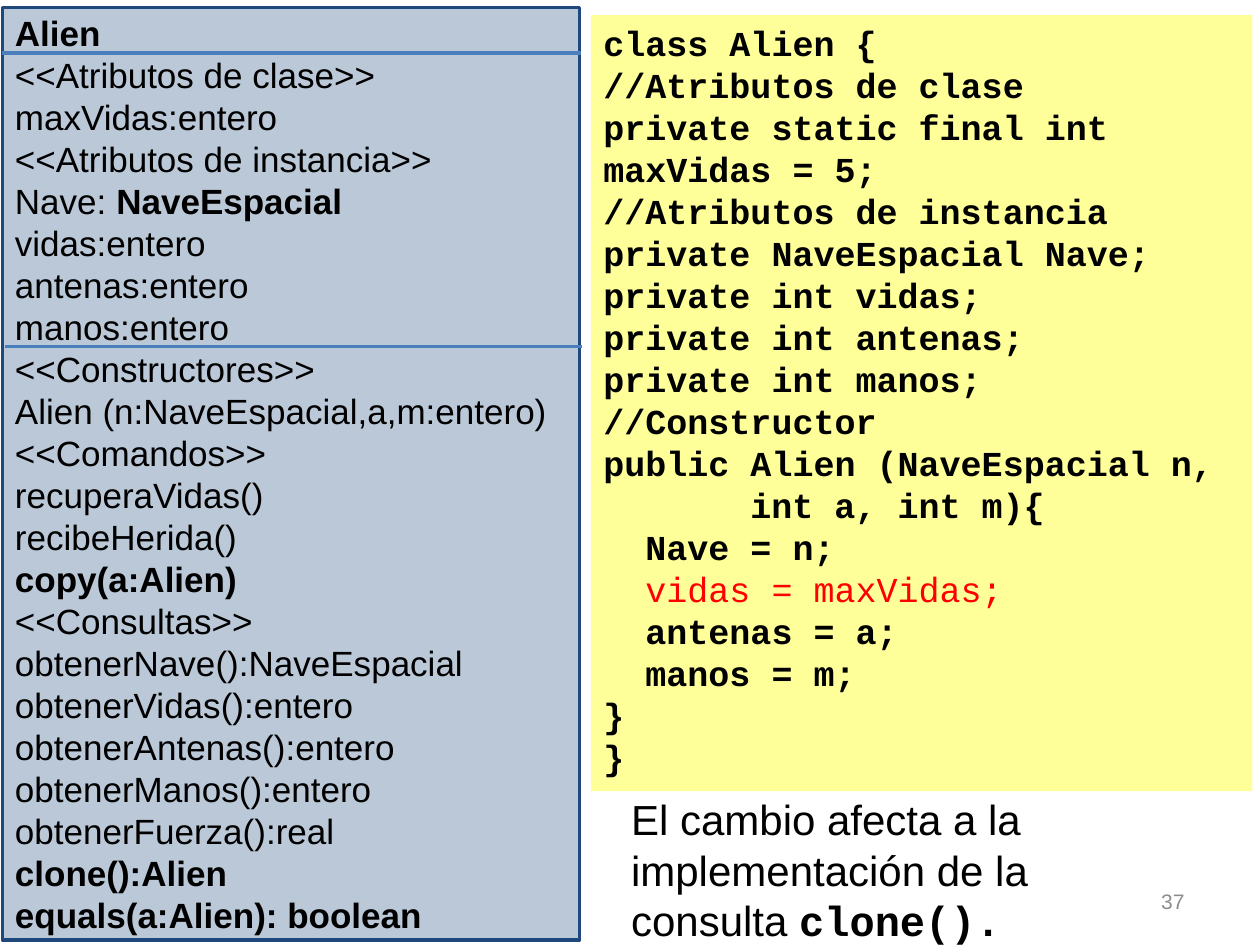
from lxml.etree import SubElement
from pptx import Presentation
from pptx.dml.color import RGBColor
from pptx.enum.shapes import MSO_CONNECTOR, MSO_SHAPE
from pptx.enum.text import MSO_ANCHOR, PP_ALIGN
from pptx.oxml.ns import qn
from pptx.util import Pt

PX = 9144
COLORS = {"navy": "1F497D", "divider": "4B7EBC", "code": "FFFF99",
          "text": "000000", "changed": "FF0000", "number": "8C8C8C"}
SANS, MONO = "Arial", "Courier New"

CLASS_MEMBERS = """Alien
<<Atributos de clase>>
maxVidas:entero
<<Atributos de instancia>>
Nave: NaveEspacial
vidas:entero
antenas:entero
manos:entero
<<Constructores>>
Alien (n:NaveEspacial,a,m:entero)
<<Comandos>>
recuperaVidas()
recibeHerida()
copy(a:Alien)
<<Consultas>>
obtenerNave():NaveEspacial
obtenerVidas():entero
obtenerAntenas():entero
obtenerManos():entero
obtenerFuerza():real
clone():Alien
equals(a:Alien): boolean"""
BOLD_MEMBERS = {"Alien", "copy(a:Alien)", "clone():Alien", "equals(a:Alien): boolean"}
FIELD_TYPE = "NaveEspacial"

CODE = """class Alien {
//Atributos de clase
private static final int maxVidas = 5;
//Atributos de instancia
private NaveEspacial Nave;
private int vidas;
private int antenas;
private int manos;
//Constructor
public Alien (NaveEspacial n,
\t\t int a, int m){
  Nave = n;
  vidas = maxVidas;
  antenas = a;
  manos = m;
}
}"""
CHANGED_LINE = "  vidas = maxVidas;"


def rgb(name):
    """Return the named colour."""
    return RGBColor.from_string(COLORS[name])


def scaled(*lengths):
    """Turn px lengths into EMU."""
    return [length * PX for length in lengths]


def style(font, size, name, color="text", bold=False):
    """Set the look of a font."""
    font.size, font.name, font.bold = Pt(size), name, bold
    font.color.rgb = rgb(color)


def add_panel(slide, box, fill, text, anchor):
    """Add a filled rectangle with left-aligned lines and return it."""
    panel = slide.shapes.add_shape(MSO_SHAPE.RECTANGLE, *scaled(*box))
    panel.shadow.inherit = False
    panel.fill.solid()
    panel.fill.fore_color.rgb = rgb(fill)
    frame = panel.text_frame
    frame.word_wrap = True
    frame.vertical_anchor = anchor
    frame.text = text
    for paragraph in frame.paragraphs:
        paragraph.alignment = PP_ALIGN.LEFT
    return panel


def add_divider(slide, left, top, width):
    """Add a horizontal line between class sections."""
    line = slide.shapes.add_connector(
        MSO_CONNECTOR.STRAIGHT, *scaled(left, top, left + width, top))
    line.line.color.rgb = rgb("divider")
    line.line.width = Pt(2)
    SubElement(line._element.spPr, qn("a:effectLst"))


def add_class_diagram(slide, box):
    """Add the class box with its members and dividers."""
    left, top, width, height = box
    panel = add_panel(slide, box, "navy", CLASS_MEMBERS, MSO_ANCHOR.MIDDLE)
    color = panel._element.spPr.find(qn("a:solidFill"))[0]
    SubElement(color, qn("a:alpha")).set("val", "30000")
    panel.line.color.rgb = rgb("navy")
    panel.line.width = Pt(2)
    for paragraph in panel.text_frame.paragraphs:
        style(paragraph.font, 20, SANS, bold=paragraph.text in BOLD_MEMBERS)
        if paragraph.text == f"Nave: {FIELD_TYPE}":
            paragraph.runs[0].text = "Nave: "
            run = paragraph.add_run()
            run.text = FIELD_TYPE
            run.font.bold = True
    add_divider(slide, left, top + 36, width + 1)
    add_divider(slide, left + 2, top + 269, width)


def add_code(slide, box):
    """Add the code panel with the changed line in red."""
    panel = add_panel(slide, box, "code", CODE, MSO_ANCHOR.TOP)
    panel.line.fill.background()
    for paragraph in panel.text_frame.paragraphs:
        changed = paragraph.text == CHANGED_LINE
        style(paragraph.font, 20, MONO, "changed" if changed else "text", not changed)


def add_remark(slide, box):
    """Add the remark under the code."""
    frame = slide.shapes.add_textbox(*scaled(*box)).text_frame
    frame.word_wrap = True
    paragraph = frame.paragraphs[0]
    properties = paragraph._p.get_or_add_pPr()
    properties.set("marL", str(12 * PX))
    properties.set("indent", "0")
    for text, name in (("El cambio afecta a la implementación de la consulta ", SANS),
                       ("clone().", MONO)):
        run = paragraph.add_run()
        run.text = text
        style(run.font, 24, name, bold=name == MONO)


def add_slide_number(slide, box):
    """Add the slide number."""
    frame = slide.shapes.add_textbox(*scaled(*box)).text_frame
    frame.word_wrap = True
    frame.vertical_anchor = MSO_ANCHOR.MIDDLE
    frame.text = "37"
    paragraph = frame.paragraphs[0]
    paragraph.alignment = PP_ALIGN.RIGHT
    style(paragraph.font, 12, SANS, "number")


def main():
    """Build and save the slide."""
    presentation = Presentation()
    presentation.slide_width, presentation.slide_height = scaled(1000, 750)
    slide = presentation.slides.add_slide(presentation.slide_layouts[6])
    add_slide_number(slide, (717, 695, 233, 40))
    add_code(slide, (469, 12, 525, 616))
    add_class_diagram(slide, (2, 6, 458, 740))
    add_remark(slide, (479, 625, 480, 155))
    presentation.save("out.pptx")


if __name__ == "__main__":
    main()
